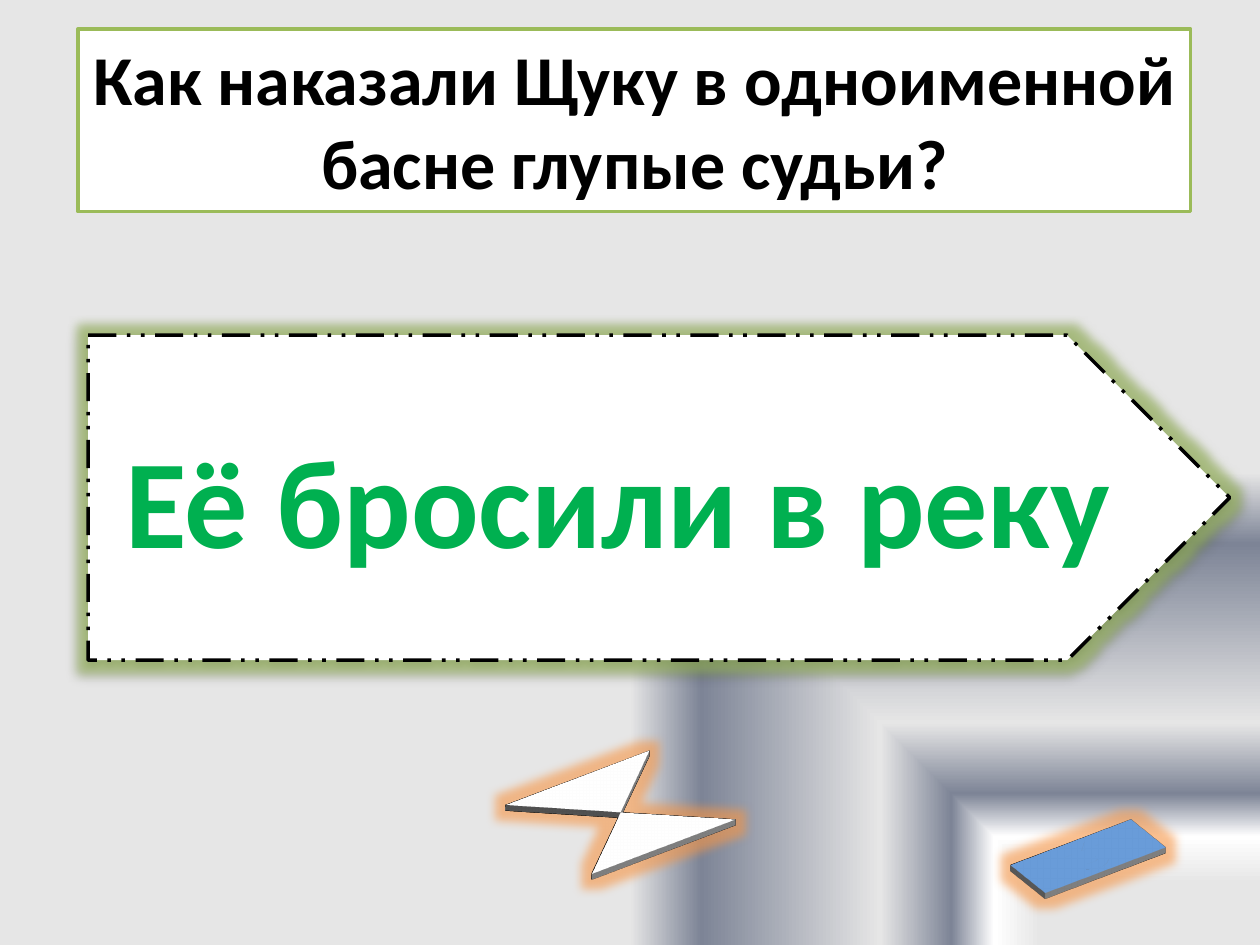
from dataclasses import dataclass

import pptx
import pptx.dml.color
import pptx.enum.dml
import pptx.enum.shapes
import pptx.enum.text
import pptx.oxml
import pptx.oxml.ns
import pptx.util

Inches = pptx.util.Inches
Pt = pptx.util.Pt
SHAPES = pptx.enum.shapes.MSO_SHAPE
NS = pptx.oxml.ns.nsdecls("a")


@dataclass(frozen=True)
class Theme:
    font: str = "Calibri"
    question_size: int = 40
    answer_size: int = 72
    black: str = "000000"
    white: str = "FFFFFF"
    green: str = "9BBB59"
    answer_green: str = "00B050"
    blue: str = "4F81BD"
    orange: str = "F79646"
    # position %, colour, opacity %
    backdrop: tuple = ((13, "E6E6E6", 100), (23, "FFFFFF", 53),
                       (32, "7D8496", 100), (47, "E6E6E6", 100),
                       (85, "7D8496", 100), (100, "E6E6E6", 100))


THEME = Theme()


def rgb(value):
    return pptx.dml.color.RGBColor.from_string(value)


def color_xml(value, opacity):
    return (f'<a:srgbClr val="{value}">'
            f'<a:alpha val="{opacity * 1000}"/></a:srgbClr>')


def paint(shape, fill, line, width):
    shape.fill.solid()
    shape.fill.fore_color.rgb = rgb(fill)
    shape.line.color.rgb = rgb(line)
    shape.line.width = Pt(width)


def write(shape, text, size, color):
    frame = shape.text_frame
    frame.word_wrap = True
    frame.text = text
    paragraph = frame.paragraphs[0]
    paragraph.alignment = pptx.enum.text.PP_ALIGN.CENTER
    font = paragraph.runs[0].font
    font.name, font.size, font.bold = THEME.font, Pt(size), True
    font.color.rgb = rgb(color)


def add_glow(shape, color, opacity, blur, distance, angle):
    """Give the shape a coloured glow and a black outer shadow."""
    shape._element.spPr.append(pptx.oxml.parse_xml(
        f'<a:effectLst {NS}>'
        f'<a:glow rad="{Pt(11)}">{color_xml(color, 60)}</a:glow>'
        f'<a:outerShdw blurRad="{Pt(blur)}" dist="{Pt(distance)}" '
        f'dir="{angle * 60000}" rotWithShape="0">'
        f'{color_xml(THEME.black, opacity)}</a:outerShdw></a:effectLst>'))


def tilt(shape):
    """Lay the shape down as a thin slab seen from above."""
    properties = shape._element.spPr
    properties.append(pptx.oxml.parse_xml(
        f'<a:scene3d {NS}><a:camera prst="isometricTopUp">'
        '<a:rot lat="19098000" lon="19080000" rev="3090000"/></a:camera>'
        '<a:lightRig rig="threePt" dir="t"/></a:scene3d>'))
    properties.append(pptx.oxml.parse_xml(
        f'<a:sp3d {NS} extrusionH="{Pt(4)}"/>'))


def draw_backdrop(slide):
    slide.background.fill.solid()
    stops = "".join(f'<a:gs pos="{position * 1000}">'
                    f'{color_xml(color, opacity)}</a:gs>'
                    for position, color, opacity in THEME.backdrop)
    gradient = pptx.oxml.parse_xml(
        f'<a:gradFill {NS}><a:gsLst>{stops}</a:gsLst><a:path path="rect">'
        '<a:fillToRect l="100000" t="100000"/></a:path></a:gradFill>')
    solid = slide._element.find(".//" + pptx.oxml.ns.qn("p:bgPr"))[0]
    solid.getparent().replace(solid, gradient)


def place_question(slide, box, text):
    question = slide.shapes.title
    question.left, question.top, question.width, question.height = box
    paint(question, THEME.white, THEME.green, 2)
    write(question, text, THEME.question_size, THEME.black)
    frame = question.text_frame
    frame.vertical_anchor = pptx.enum.text.MSO_ANCHOR.TOP
    frame.auto_size = pptx.enum.text.MSO_AUTO_SIZE.SHAPE_TO_FIT_TEXT


def place_answer(slide, box, text):
    answer = slide.shapes.add_shape(SHAPES.PENTAGON, *box)
    paint(answer, THEME.white, THEME.black, 2)
    answer.line.dash_style = pptx.enum.dml.MSO_LINE.DASH_DOT_DOT
    add_glow(answer, THEME.green, 32, 3.5, 2.2, 90)
    write(answer, text, THEME.answer_size, THEME.answer_green)
    answer.text_frame.vertical_anchor = pptx.enum.text.MSO_ANCHOR.MIDDLE


def place_slab(slide, box, kind, fill):
    slab = slide.shapes.add_shape(kind, *box)
    paint(slab, fill, THEME.white, 2.75)
    add_glow(slab, THEME.orange, 43, 25, 0, 45)
    tilt(slab)


def inches(*lengths):
    return [Inches(length) for length in lengths]


def main():
    deck = pptx.Presentation()
    deck.slide_width, deck.slide_height = inches(10, 7.5)
    slide = deck.slides.add_slide(deck.slide_layouts.get_by_name("Title Only"))

    draw_backdrop(slide)
    place_question(slide, inches(0.62, 0.23, 8.83, 1.45),
                   "Как наказали Щуку в одноименной басне глупые судьи?")
    # Hourglass lies behind the answer, return button in front
    place_slab(slide, inches(4.22, 5.86, 1.41, 1.17),
               SHAPES.FLOWCHART_COLLATE, THEME.white)
    place_answer(slide, inches(0.7, 2.66, 9.06, 2.58), "Её бросили в реку")
    place_slab(slide, inches(8.05, 6.56, 1.17, 0.47),
               SHAPES.ACTION_BUTTON_RETURN, THEME.blue)

    deck.save("out.pptx")


if __name__ == "__main__":
    main()
